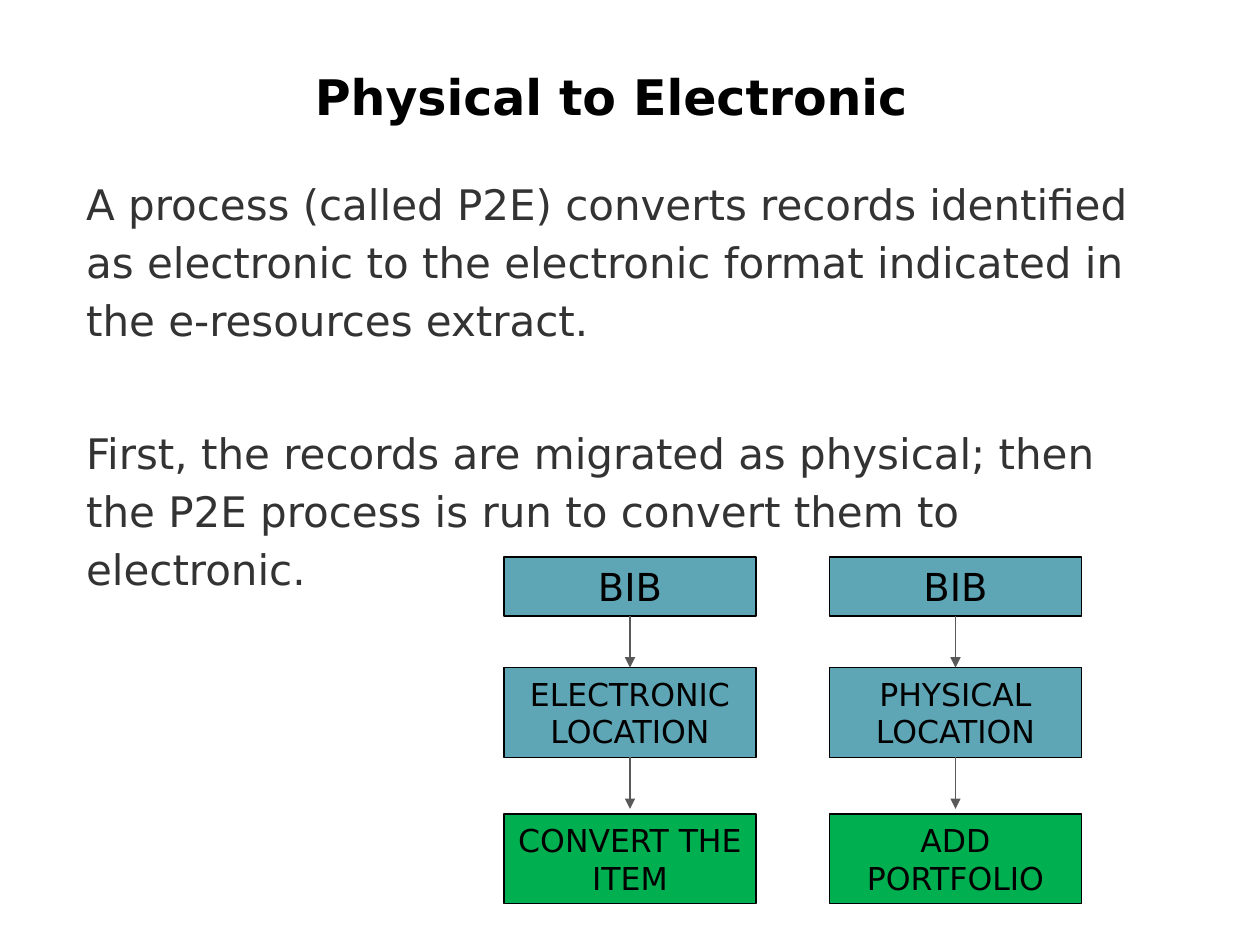
from dataclasses import dataclass

from lxml import etree
from pptx import Presentation
from pptx.dml.color import RGBColor
from pptx.enum.shapes import MSO_CONNECTOR, MSO_SHAPE
from pptx.enum.text import MSO_ANCHOR, MSO_AUTO_SIZE, PP_ALIGN
from pptx.oxml.ns import qn
from pptx.util import Pt

LEFT, CENTER = PP_ALIGN.LEFT, PP_ALIGN.CENTER
MIDDLE, TOP, BOTTOM = MSO_ANCHOR.MIDDLE, MSO_ANCHOR.TOP, MSO_ANCHOR.BOTTOM
NO_AUTOFIT = MSO_AUTO_SIZE.NONE
RECTANGLE, STRAIGHT = MSO_SHAPE.RECTANGLE, MSO_CONNECTOR.STRAIGHT

FONT = "DejaVu Sans"
COLORS = {
    "title": "000000",
    "body": "333333",
    "outline": "000000",
    "arrow": "595959",
    "record": "5EA5B6",
    "action": "00B050",
}


@dataclass
class Step:
    """One row of the flow, shared by both columns."""
    top: float
    height: float
    size: float
    fill: str


@dataclass
class Flow:
    left: float
    labels: tuple[str, ...]


BOX_WIDTH = 144
ARROW_LENGTH = 29.5
STEPS = (
    Step(318.25, 33.75, 22, "record"),
    Step(381.5, 51.25, 18, "record"),
    Step(465.1, 51.25, 18, "action"),
)
FLOWS = (
    Flow(288, ("BIB", "ELECTRONIC LOCATION", "CONVERT THE ITEM")),
    Flow(474, ("BIB", "PHYSICAL LOCATION", "ADD PORTFOLIO")),
)
BODY = (
    "A process (called P2E) converts records identified as electronic "
    "to the electronic format indicated in the e-resources extract.",
    "First, the records are migrated as physical; then the P2E process "
    "is run to convert them to electronic.",
)


def rgb(name: str) -> RGBColor:
    return RGBColor.from_string(COLORS[name])


def write(shape, *paragraphs: str, size: float, color: str, bold=False,
          align=CENTER, anchor=MIDDLE, line_spacing=1.0, gap=0) -> None:
    """Fill a shape with unbulleted paragraphs, separated by gap points."""
    frame = shape.text_frame
    frame.word_wrap = True
    frame.auto_size = NO_AUTOFIT
    frame.vertical_anchor = anchor
    for index, text in enumerate(paragraphs):
        paragraph = frame.add_paragraph() if index else frame.paragraphs[0]
        paragraph.text = text
        paragraph.alignment = align
        paragraph.line_spacing = line_spacing
        paragraph.space_before = Pt(gap if index else 0)
        properties = paragraph._p.get_or_add_pPr()
        properties.set("marL", "0")
        properties.set("indent", "0")
        etree.SubElement(properties, qn("a:buNone"))
        font = paragraph.font
        font.name, font.size, font.bold = FONT, Pt(size), bold
        font.color.rgb = rgb(color)


def place(shape, left: float, top: float, width: float, height: float) -> None:
    shape.left, shape.top = Pt(left), Pt(top)
    shape.width, shape.height = Pt(width), Pt(height)


def draw_box(slide, left: float, step: Step, label: str) -> None:
    box = slide.shapes.add_shape(
        RECTANGLE, Pt(left), Pt(step.top), Pt(BOX_WIDTH), Pt(step.height))
    box.shadow.inherit = False
    box.fill.solid()
    box.fill.fore_color.rgb = rgb(step.fill)
    box.line.color.rgb = rgb("outline")
    box.line.width = Pt(0.75)
    write(box, label, size=step.size, color="outline")


def draw_arrow(slide, x: float, top: float) -> None:
    arrow = slide.shapes.add_connector(
        STRAIGHT, Pt(x), Pt(top), Pt(x), Pt(top + ARROW_LENGTH))
    arrow.line.color.rgb = rgb("arrow")
    arrow.line.width = Pt(1)
    properties = arrow._element.spPr
    etree.SubElement(properties.find(qn("a:ln")), qn("a:tailEnd"), type="triangle")
    etree.SubElement(properties, qn("a:effectLst"))


def draw_flow(slide, flow: Flow) -> None:
    for step, label in zip(STEPS, flow.labels):
        draw_box(slide, flow.left, step, label)
    for step in STEPS[:-1]:
        draw_arrow(slide, flow.left + BOX_WIDTH / 2, step.top + step.height)


def main() -> None:
    deck = Presentation()
    deck.slide_width, deck.slide_height = Pt(720), Pt(540)
    slide = deck.slides.add_slide(deck.slide_layouts[1])

    # Title and explanation
    title, body = slide.placeholders
    place(title, 43.2, 0, 612, 75)
    write(title, "Physical to Electronic", size=28, color="title", bold=True,
          anchor=BOTTOM)
    place(body, 42, 94.3, 612, 324)
    write(body, *BODY, size=24, color="body", align=LEFT, anchor=TOP,
          line_spacing=1.15, gap=43)

    # Conversion flows
    for flow in FLOWS:
        draw_flow(slide, flow)

    deck.save("out.pptx")


if __name__ == "__main__":
    main()
